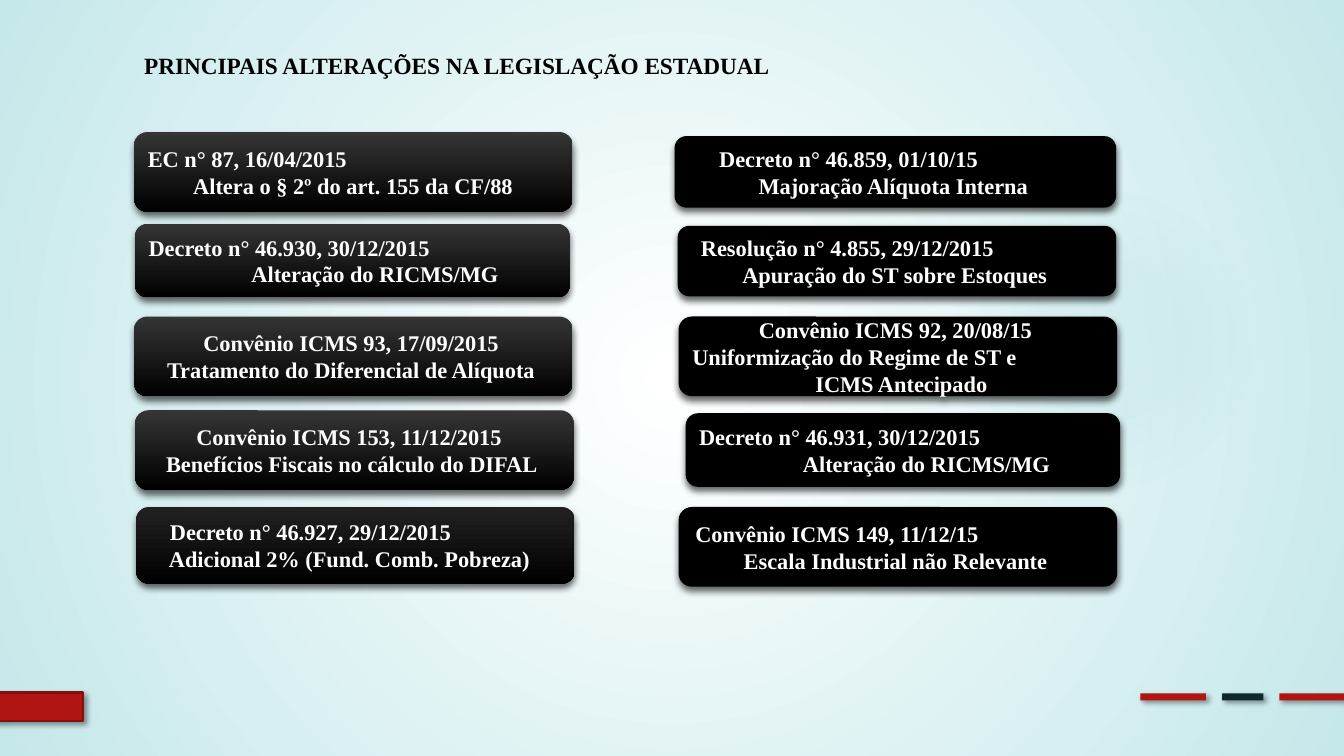
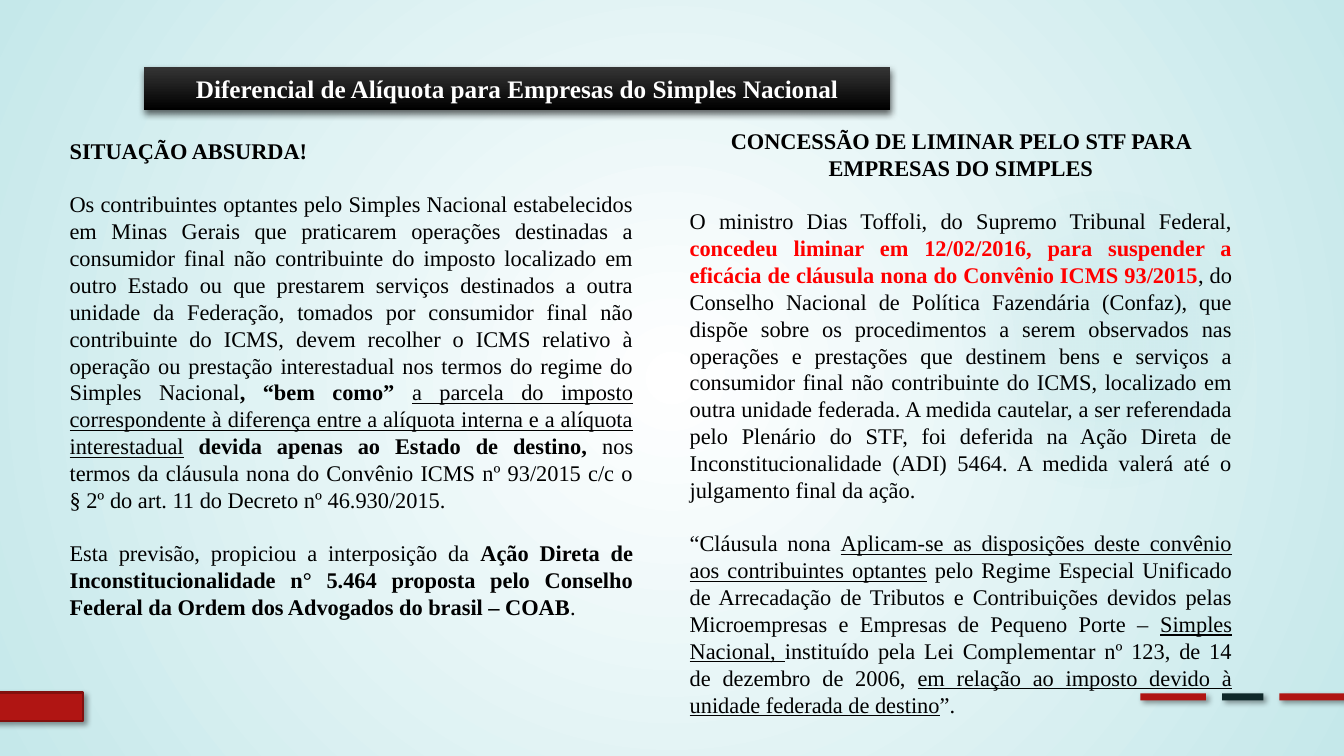
from lxml.etree import SubElement
from pptx import Presentation
from pptx.dml.color import RGBColor
from pptx.enum.shapes import MSO_SHAPE as Shape
from pptx.enum.text import MSO_ANCHOR as Anchor, MSO_AUTO_SIZE as AutoSize, PP_ALIGN as Align
from pptx.oxml.ns import qn
from pptx.util import Inches, Pt

FONT = "Times New Roman"
COLORS = {
    "white": "FFFFFF", "black": "000000", "mist": "C5E8EA", "teal": "50B9C1",
    "red": "B01513", "dark red": "82100E", "navy": "0F282A", "alert": "FF0000",
    "charcoal": "353535", "coal": "212121",
}
SOFT_SHADOW = (40, 4, 3, 45)  # opacity %, blur, distance, angle
DEEP_SHADOW = (60, 5, 3, 90)

# Content: text pieces are (text, style); styles are b(old), u(nderlined), a(lert)
HEADING = "PRINCIPAIS ALTERAÇÕES NA LEGISLAÇÃO ESTADUAL"
# Cards: box (left, top, width, height), top shade, lines as (indent, text)
CARDS = [
    ((1.33, 1.31, 4.35, 0.79), "charcoal",
     [(0, "EC n° 87, 16/04/2015"), (0.45, "Altera o § 2º do art. 155 da CF/88")]),
    ((1.34, 2.22, 4.31, 0.73), "charcoal",
     [(0, "Decreto n° 46.930, 30/12/2015"), (1.02, "Alteração do RICMS/MG")]),
    ((1.33, 3.14, 4.35, 0.79), "charcoal",
     [(0.55, "Convênio ICMS 93, 17/09/2015"), (0.19, "Tratamento do Diferencial de Alíquota")]),
    ((1.34, 4.07, 4.35, 0.79), "charcoal",
     [(0.47, "Convênio ICMS 153, 11/12/2015"), (0.17, "Benefícios Fiscais no cálculo do DIFAL")]),
    ((1.35, 5.03, 4.35, 0.76), "coal",
     [(0.2, "Decreto n° 46.927, 29/12/2015"), (0.19, "Adicional 2% (Fund. Comb. Pobreza)")]),
    ((6.69, 1.35, 4.38, 0.71), "black",
     [(0.31, "Decreto n° 46.859, 01/10/15"), (0.7, "Majoração Alíquota Interna")]),
    ((6.72, 2.24, 4.35, 0.7), "black",
     [(0.1, "Resolução n° 4.855, 29/12/2015"), (0.51, "Apuração do ST sobre Estoques")]),
    ((6.73, 3.14, 4.35, 0.79), "black",
     [(0.66, "Convênio ICMS 92, 20/08/15"), (0, "Uniformização do Regime de ST e"),
      (1.22, "ICMS Antecipado")]),
    ((6.8, 4.1, 4.31, 0.73), "black",
     [(0, "Decreto n° 46.931, 30/12/2015"), (1.03, "Alteração do RICMS/MG")]),
    ((6.73, 5.03, 4.35, 0.79), "black",
     [(0.03, "Convênio ICMS 149, 11/12/15"), (0.51, "Escala Industrial não Relevante")]),
]
BANNER = "Diferencial de Alíquota para Empresas do Simples Nacional"
COLUMNS = [
    ((0.59, 1.31, 5.79, 4.95), [
        (Align.JUSTIFY, [("SITUAÇÃO ABSURDA!", "b")]),
        (Align.JUSTIFY, [
            ("Os contribuintes optantes pelo Simples Nacional estabelecidos em Minas Gerais que "
             "praticarem operações destinadas a consumidor final não contribuinte do imposto "
             "localizado em outro Estado ou que prestarem serviços destinados a outra unidade da "
             "Federação, tomados por consumidor final não contribuinte do ICMS, devem recolher o "
             "ICMS relativo à operação ou prestação interestadual nos termos do regime do Simples "
             "Nacional", ""),
            (", “bem como” ", "b"),
            ("a parcela do imposto correspondente à diferença entre a alíquota interna e a "
             "alíquota interestadual", "u"),
            (" devida apenas ao Estado de destino, ", "b"),
            ("nos termos da cláusula nona do Convênio ICMS nº 93/2015 c/c o § 2º do art. 11 do "
             "Decreto nº 46.930/2015.", "")]),
        (Align.JUSTIFY, [
            ("Esta previsão, propiciou a interposição da ", ""),
            ("Ação Direta de Inconstitucionalidade n° 5.464 proposta pelo Conselho Federal da "
             "Ordem dos Advogados do brasil – COAB", "b"),
            (".", "")]),
    ]),
    ((6.74, 1.21, 5.58, 6.02), [
        (Align.CENTER, [("CONCESSÃO DE LIMINAR PELO STF PARA EMPRESAS DO SIMPLES", "b")]),
        (Align.JUSTIFY, [
            ("O ministro Dias Toffoli, do Supremo Tribunal Federal, ", ""),
            ("concedeu liminar em 12/02/2016, para suspender a eficácia de cláusula nona do "
             "Convênio ICMS 93/2015", "ba"),
            (", do Conselho Nacional de Política Fazendária (Confaz), que dispõe sobre os "
             "procedimentos a serem observados nas operações e prestações que destinem bens e "
             "serviços a consumidor final não contribuinte do ICMS, localizado em outra unidade "
             "federada. A medida cautelar, a ser referendada pelo Plenário do STF, foi deferida "
             "na Ação Direta de Inconstitucionalidade (ADI) 5464. A medida valerá até o "
             "julgamento final da ação.", "")]),
        (Align.JUSTIFY, [
            ("“Cláusula nona ", ""),
            ("Aplicam-se as disposições deste convênio aos contribuintes optantes", "u"),
            (" pelo Regime Especial Unificado de Arrecadação de Tributos e Contribuições devidos "
             "pelas Microempresas e Empresas de Pequeno Porte – ", ""),
            ("Simples Nacional, ", "u"),
            ("instituído pela Lei Complementar nº 123, de 14 de dezembro de 2006, ", ""),
            ("em relação ao imposto devido à unidade federada de destino", "u"),
            ("”.", "")]),
    ]),
]


def color(name):
    return RGBColor.from_string(COLORS[name])


def paint_gradient(owner, stops, angle=None):
    """Stops are (position %, colour, opacity %); no angle means a circle."""
    owner.fill.gradient()


def set_gradient(fill, root, stops, angle=None):
    """Stops are (position %, colour, opacity %); without an angle it is circular."""
    fill.gradient()
    gradient = root.find(".//" + qn("a:gradFill"))
    for child in list(gradient):
        gradient.remove(child)
    stop_list = SubElement(gradient, qn("a:gsLst"))
    for position, name, opacity in stops:
        stop = SubElement(stop_list, qn("a:gs"), pos=str(position * 1000))
        tint = SubElement(stop, qn("a:srgbClr"), val=COLORS[name])
        SubElement(tint, qn("a:alpha"), val=str(opacity * 1000))
    if angle is None:
        circle = SubElement(gradient, qn("a:path"), path="circle")
        SubElement(circle, qn("a:fillToRect"), l="50000", t="50000", r="50000", b="50000")
    else:
        SubElement(gradient, qn("a:lin"), ang=str(angle * 60000), scaled="0")


def add_shadow(shape, opacity, blur, distance, angle):
    shape.shadow.inherit = False
    effects = shape.element.spPr.find(qn("a:effectLst"))
    shadow = SubElement(effects, qn("a:outerShdw"), blurRad=str(Pt(blur)), dist=str(Pt(distance)),
                        dir=str(angle * 60000), algn="ctr", rotWithShape="0")
    tint = SubElement(shadow, qn("a:srgbClr"), val=COLORS["black"])
    SubElement(tint, qn("a:alpha"), val=str(opacity * 1000))


def place(shape, box):
    shape.left, shape.top, shape.width, shape.height = map(Inches, box)


def add_plain(slide, kind, box):
    shape = slide.shapes.add_shape(kind, *map(Inches, box))
    shape.shadow.inherit = False
    shape.line.fill.background()
    return shape


def set_frame(shape, anchor):
    frame = shape.text_frame
    frame.word_wrap = True
    frame.auto_size = AutoSize.NONE
    frame.vertical_anchor = anchor
    return frame


def format_paragraph(paragraph, size, name="black", bold=None, align=Align.LEFT, indent=0, before=0):
    properties = paragraph._p.get_or_add_pPr()
    properties.set("marL", str(Inches(indent)))
    properties.set("indent", "0")
    SubElement(properties, qn("a:buNone"))
    paragraph.alignment = align
    paragraph.space_before = Pt(before)
    font = paragraph.font
    font.name, font.size, font.bold = FONT, Pt(size), bold
    font.color.rgb = color(name)


def next_paragraph(frame, index):
    return frame.add_paragraph() if index else frame.paragraphs[0]


def style_dark(shape, shade):
    if shade == "black":
        shape.fill.solid()
        shape.fill.fore_color.rgb = color("black")
    else:
        set_gradient(shape.fill, shape.element, [(0, shade, 100), (100, "black", 100)], 90)
    add_shadow(shape, *DEEP_SHADOW)


def decorate_master(master, slide):
    """Draw the glow and the bands, then hand them to the master."""
    set_gradient(master.background.fill, master.element, [(0, "white", 100), (100, "mist", 100)])
    glow = add_plain(slide, Shape.OVAL, (9.41, 1.83, 3.08, 3.08))
    set_gradient(glow.fill, glow.element, [(0, "teal", 7), (36, "teal", 6), (69, "teal", 0)])
    parts = [glow]
    for box, name in [((-0.17, 6.87, 0.99, 0.28), "red"), ((12.69, 6.88, 0.65, 0.07), "red"),
                      ((12.12, 6.88, 0.41, 0.07), "navy"), ((11.31, 6.88, 0.65, 0.07), "red")]:
        band = add_plain(slide, Shape.RECTANGLE, box)
        band.fill.solid()
        band.fill.fore_color.rgb = color(name)
        add_shadow(band, *SOFT_SHADOW)
        parts.append(band)
    parts[1].line.color.rgb = color("dark red")
    parts[1].line.width = Pt(1.5)
    for part in parts:
        master.shapes.element.append(part.element)


def fill_changes(slide):
    title = slide.shapes.title
    place(title, (1.33, 0.46, 6.81, 0.42))
    paragraph = set_frame(title, Anchor.TOP).paragraphs[0]
    paragraph.text = HEADING
    format_paragraph(paragraph, 16.6, bold=True)
    for box, shade, lines in CARDS:
        card = add_plain(slide, Shape.ROUNDED_RECTANGLE, box)
        style_dark(card, shade)
        frame = set_frame(card, Anchor.MIDDLE)
        for index, (indent, text) in enumerate(lines):
            paragraph = next_paragraph(frame, index)
            paragraph.text = text
            format_paragraph(paragraph, 16, "white", True, indent=indent)


def fill_simples(slide):
    banner, *bodies = slide.placeholders
    place(banner, (1.43, 0.66, 7.4, 0.43))
    outline = SubElement(banner.element.spPr, qn("a:prstGeom"), prst="roundRect")
    SubElement(outline, qn("a:avLst"))
    style_dark(banner, "charcoal")
    paragraph = set_frame(banner, Anchor.MIDDLE).paragraphs[0]
    paragraph.text = BANNER
    format_paragraph(paragraph, 18, "white", True, Align.CENTER)
    for body, (box, paragraphs) in zip(bodies, COLUMNS):
        place(body, box)
        frame = set_frame(body, Anchor.TOP)
        for index, (align, pieces) in enumerate(paragraphs):
            paragraph = next_paragraph(frame, index)
            format_paragraph(paragraph, 16, align=align, before=19 if index else 0)
            for text, style in pieces:
                run = paragraph.add_run()
                run.text = text
                font = run.font
                font.name, font.size = FONT, Pt(16)
                font.bold, font.underline = "b" in style, "u" in style
                font.color.rgb = color("alert" if "a" in style else "black")


def main():
    presentation = Presentation()
    presentation.slide_width, presentation.slide_height = Inches(13.33), Inches(7.5)
    title_only, two_content = presentation.slide_layouts[5], presentation.slide_layouts[3]
    changes = presentation.slides.add_slide(title_only)
    decorate_master(presentation.slide_master, changes)
    fill_changes(changes)
    fill_simples(presentation.slides.add_slide(two_content))
    presentation.save("out.pptx")


if __name__ == "__main__":
    main()
